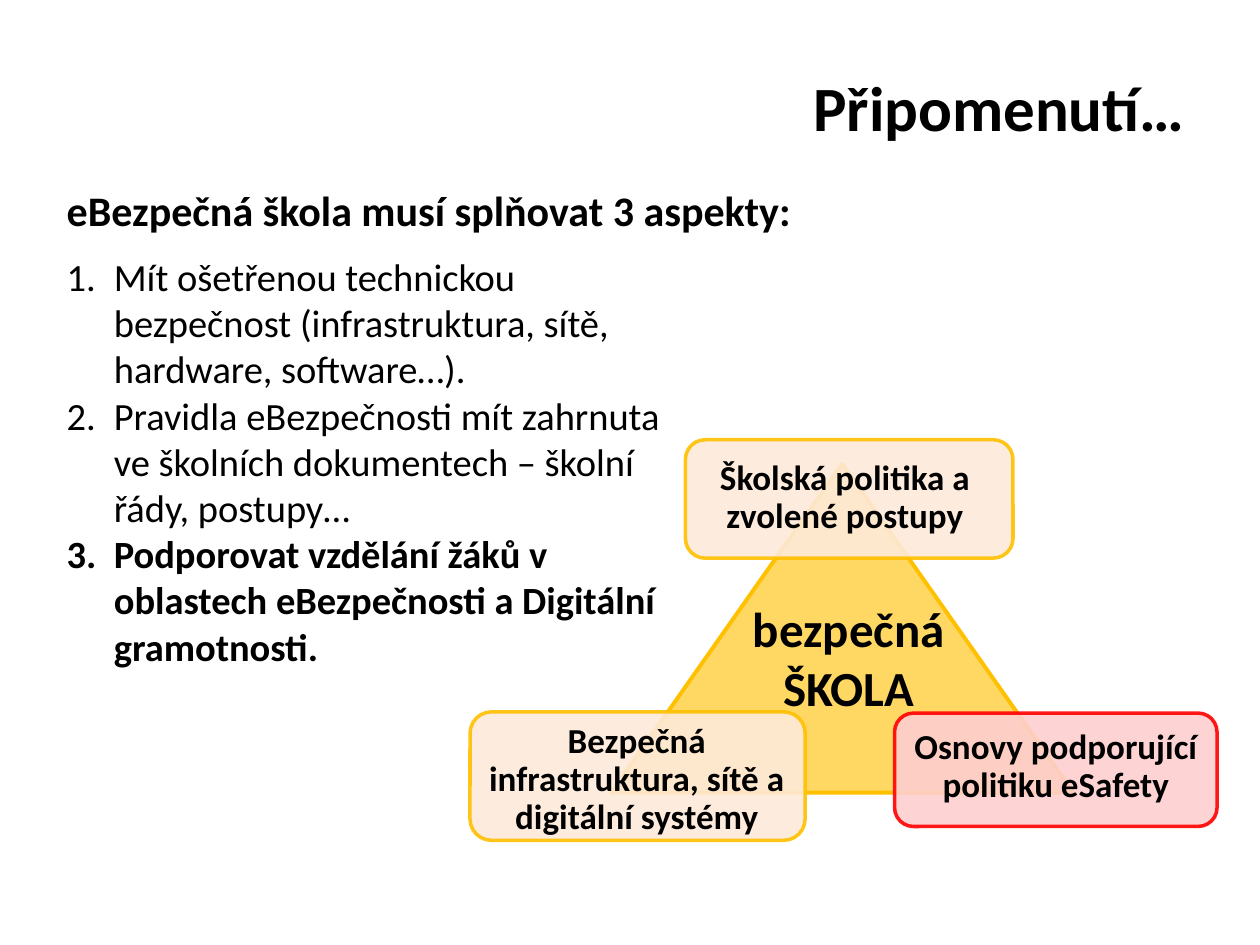
"""Build the slide on the three aspects of a safe school."""
from dataclasses import dataclass

import pptx
import pptx.dml.color
import pptx.enum.shapes
import pptx.enum.text
import pptx.oxml.ns
import pptx.slide
import pptx.util
from lxml import etree

Pt = pptx.util.Pt
Color = pptx.dml.color.RGBColor
Kind = pptx.enum.shapes.MSO_SHAPE
Align = pptx.enum.text.PP_ALIGN
Anchor = pptx.enum.text.MSO_ANCHOR
qn = pptx.oxml.ns.qn

BLACK = Color(0x00, 0x00, 0x00)
GOLD = Color(0xFF, 0xC0, 0x00)
CREAM = Color(0xFD, 0xEA, 0xDA)
PINK = Color(0xFD, 0xCF, 0xCF)
RED = Color(0xFF, 0x00, 0x00)

Box = tuple[float, float, float, float]


@dataclass
class Form:
    """Hold the look of one filled shape."""
    kind: Kind
    box: Box
    fill: Color
    line: Color
    width: float
    alpha: int
    edge: int


@dataclass
class Text:
    """Hold one text box and its format."""
    box: Box
    lines: list[str]
    size: float
    bold: tuple[bool, ...] = (True,)
    align: Align = Align.LEFT
    anchor: Anchor = Anchor.TOP
    pad: tuple[float, float] = (7.2, 3.6)
    space: float = 1
    wrap: bool = True
    number: bool = False


def fade(fill: pptx.dml.fill.FillFormat, color: Color, alpha: int) -> None:
    """Fill with a colour at the given percentage of opacity."""
    fill.solid()
    fill.fore_color.rgb = color
    if alpha < 100:
        node = fill._xPr.find(".//" + qn("a:srgbClr"))
        etree.SubElement(node, qn("a:alpha"), val=str(alpha * 1000))


def draw(slide: pptx.slide.Slide, form: Form) -> None:
    """Draw one filled shape."""
    shape = slide.shapes.add_shape(form.kind, *map(Pt, form.box))
    shape.shadow.inherit = False
    fade(shape.fill, form.fill, form.alpha)
    shape.line.width = Pt(form.width)
    fade(shape.line.fill, form.line, form.edge)


def count(para: pptx.text.text._Paragraph, indent: float) -> None:
    """Number a paragraph with a hanging indent."""
    props = para._p.get_or_add_pPr()
    props.set("marL", str(Pt(indent)))
    props.set("indent", str(-Pt(indent)))
    etree.SubElement(props, qn("a:buFont"), typeface="+mj-lt")
    etree.SubElement(props, qn("a:buAutoNum"), type="arabicPeriod")


def write(slide: pptx.slide.Slide, text: Text) -> None:
    """Write one text box."""
    frame = slide.shapes.add_textbox(*map(Pt, text.box)).text_frame
    side, top = map(Pt, text.pad)
    look = {"word_wrap": text.wrap, "vertical_anchor": text.anchor,
            "margin_left": side, "margin_right": side,
            "margin_top": top, "margin_bottom": top}
    for name, value in look.items():
        setattr(frame, name, value)
    for i, line in enumerate(text.lines):
        para = frame.add_paragraph() if i else frame.paragraphs[0]
        para.alignment = text.align
        para.line_spacing = text.space
        if text.number:
            count(para, 27)
        run = para.add_run()
        run.text = line
        style = {"name": "Calibri", "size": Pt(text.size),
                 "bold": text.bold[i % len(text.bold)]}
        for name, value in style.items():
            setattr(run.font, name, value)
        run.font.color.rgb = BLACK


def card(box: Box, fill: Color, line: Color) -> Form:
    """Describe a rounded card."""
    return Form(Kind.ROUNDED_RECTANGLE, box, fill, line, 2, 90, 90)


def label(box: Box, words: str) -> Text:
    """Describe the label of a card."""
    return Text(box, [words], 20, align=Align.CENTER, anchor=Anchor.MIDDLE,
                pad=(5, 5), space=0.9)


ITEMS = [
    Form(Kind.ISOSCELES_TRIANGLE, (349.2, 265, 264.2, 187.9),
         GOLD, GOLD, 2.25, 61, 100),
    card((511.2, 407.5, 184.3, 64.8), PINK, RED),
    label((514.8, 409, 177.1, 58.3), "Osnovy podporující politiku eSafety"),
    card((391.7, 251.3, 187.2, 67.7), CREAM, GOLD),
    label((387.4, 256.5, 190.8, 56.2), "Školská politika a zvolené postupy"),
    card((268.6, 406.8, 191.5, 73.4), CREAM, GOLD),
    label((267.8, 409, 192.2, 73.4),
          "Bezpečná infrastruktura, sítě a digitální systémy"),
    Text((36, 21.6, 648, 78.5), ["Připomenutí…"], 36,
         align=Align.RIGHT, anchor=Anchor.MIDDLE),
    Text((409, 338.4, 151.9, 74.9), ["bezpečná", "ŠKOLA"], 28,
         align=Align.CENTER),
    Text((31, 141.1, 369.4, 247), [
        "Mít ošetřenou technickou bezpečnost (infrastruktura, sítě, "
        "hardware, software…).",
        "Pravidla eBezpečnosti mít zahrnuta ve školních dokumentech – "
        "školní řády, postupy…",
        "Podporovat vzdělání žáků v oblastech eBezpečnosti a Digitální "
        "gramotnosti."], 22, bold=(False, False, True), number=True),
    Text((31, 102.2, 432.7, 36), ["eBezpečná škola musí splňovat 3 aspekty:"],
         24, wrap=False),
]


def main() -> None:
    """Build and save the slide."""
    deck = pptx.Presentation()
    deck.slide_width, deck.slide_height = Pt(720), Pt(540)
    slide = deck.slides.add_slide(deck.slide_layouts[6])
    for item in ITEMS:
        if isinstance(item, Form):
            draw(slide, item)
        else:
            write(slide, item)
    deck.save("out.pptx")


if __name__ == "__main__":
    main()
